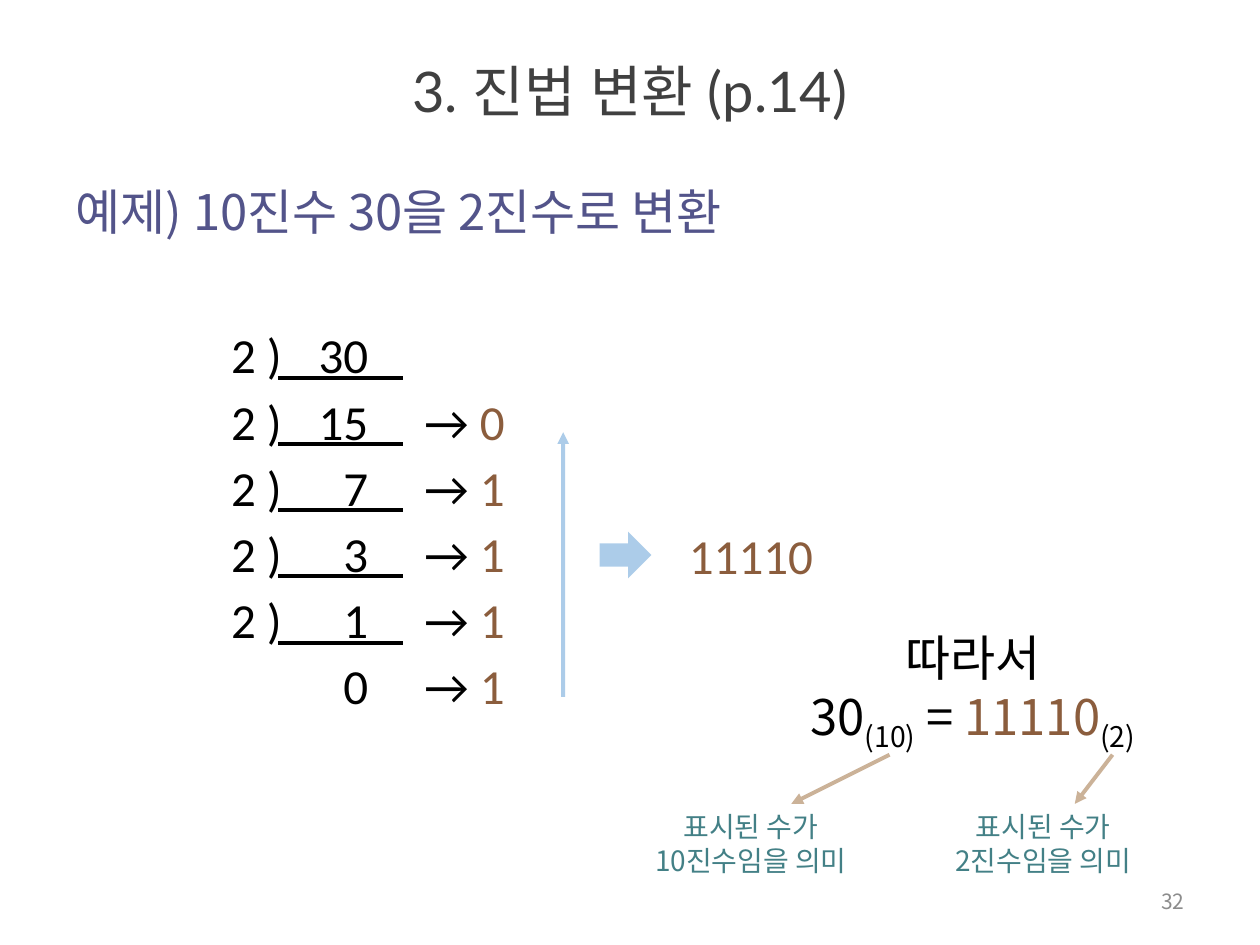
from dataclasses import dataclass

from lxml.etree import SubElement
from pptx import Presentation
from pptx.dml.color import RGBColor
from pptx.enum.shapes import MSO_CONNECTOR as Connector, MSO_SHAPE as Shape
from pptx.enum.text import MSO_ANCHOR as Anchor, MSO_AUTO_SIZE as AutoSize, PP_ALIGN as Align
from pptx.oxml.ns import qn
from pptx.util import Inches, Pt


@dataclass(frozen=True)
class Theme:
    title: str = "404040"
    heading: str = "53548A"
    text: str = "000000"
    result: str = "8B5D3D"
    note: str = "438086"
    number: str = "8C8C8C"
    blue: str = "5B9BD5"
    brown: str = "996633"
    title_size: int = 32
    main_size: int = 28
    note_size: int = 16
    number_size: int = 12
    title_font: str = "Lato"
    digit_font: str = "Calibri"
    korean_font: str = "Noto Sans CJK KR"


THEME = Theme()


def set_values(target, values):
    for name, value in values.items():
        setattr(target, name, value)


def place(shape, box):
    names = ("left", "top", "width", "height")
    set_values(shape, {name: Inches(value) for name, value in zip(names, box)})


def add_run(paragraph, text, color, size, font, baseline=0):
    run = paragraph.add_run()
    run.text = text
    set_values(run.font, {"size": Pt(size), "name": font, "bold": False})
    run.font.color.rgb = RGBColor.from_string(color)
    properties = run.font._element
    SubElement(properties, qn("a:ea")).set("typeface", font)
    if baseline:
        properties.set("baseline", str(baseline * 1000))


def fill_text(shape, lines, size, font, align=Align.LEFT):
    """Each line is a list of (text, color[, baseline percent]) runs."""
    frame = shape.text_frame
    for index, runs in enumerate(lines):
        paragraph = frame.add_paragraph() if index else frame.paragraphs[0]
        paragraph.alignment = align
        for text, color, *baseline in runs:
            add_run(paragraph, text, color, size, font, *baseline)


def add_text(slide, box, lines, size=THEME.main_size, font=THEME.digit_font,
             align=Align.LEFT, **frame_format):
    text_box = slide.shapes.add_textbox(*map(Inches, box))
    values = {"word_wrap": True, "auto_size": AutoSize.SHAPE_TO_FIT_TEXT}
    set_values(text_box.text_frame, values | frame_format)
    fill_text(text_box, lines, size, font, align)


def make_half_transparent(fill):
    color = fill._xPr.find(qn("a:solidFill"))[0]
    SubElement(color, qn("a:alpha")).set("val", "50000")


def add_line(slide, start, end, color=THEME.text, arrow=False):
    line = slide.shapes.add_connector(Connector.STRAIGHT, *map(Inches, start + end))
    line.line.width = Pt(2.25)
    line.line.fill.solid()
    line.line.color.rgb = RGBColor.from_string(color)
    if arrow:
        make_half_transparent(line.line.fill)
        SubElement(line.line._ln, qn("a:tailEnd")).set("type", "triangle")
    SubElement(line._element.spPr, qn("a:effectLst"))


def add_block_arrow(slide, box, color):
    arrow = slide.shapes.add_shape(Shape.RIGHT_ARROW, *map(Inches, box))
    arrow.shadow.inherit = False
    arrow.fill.solid()
    arrow.fill.fore_color.rgb = RGBColor.from_string(color)
    make_half_transparent(arrow.fill)
    arrow.line.fill.background()


def add_headings(slide):
    title, body = slide.placeholders
    place(title, (0.5, 0.36, 9, 0.71))
    title.text_frame.vertical_anchor = Anchor.MIDDLE
    fill_text(title, [[("3. 진법 변환 (p.14)", THEME.title)]],
              THEME.title_size, THEME.title_font, Align.CENTER)

    place(body, (0.5, 1.39, 9, 5.43))
    fill_text(body, [[("예제) 10진수 30을 2진수로 변환", THEME.heading)]],
              THEME.main_size, THEME.korean_font)
    properties = body.text_frame.paragraphs[0]._p.get_or_add_pPr()
    for name in ("marL", "indent"):
        properties.set(name, "0")
    SubElement(properties, qn("a:buNone"))


def add_division(slide, dividend, divisor=2, top=2.53, pitch=0.525):
    """Divide until zero is left, one row a step, with the remainders beside."""
    remainder = None
    while True:
        add_text(slide, (2.39, top, 0.63, 0.57), [[(str(dividend), THEME.text)]],
                 align=Align.RIGHT)
        if remainder is not None:
            add_text(slide, (3.27, top, 0.88, 0.57),
                     [[("→ ", THEME.text), (str(remainder), THEME.result)]])
        if dividend == 0:
            break
        add_text(slide, (1.51, top, 0.62, 0.57), [[(str(divisor), THEME.text)]],
                 align=Align.RIGHT)
        add_text(slide, (2.02, top, 0.25, 0.57), [[(")", THEME.text)]])
        add_line(slide, (2.21, top + 0.47), (3.2, top + 0.47))
        dividend, remainder = divmod(dividend, divisor)
        top += pitch


def add_conclusion(slide):
    add_text(slide, (6.28, 4.93, 2.88, 1.04),
             [[("따라서", THEME.text)],
              [("30", THEME.text), ("(10)", THEME.text, -25), (" = ", THEME.text),
               ("11110", THEME.result), ("(2)", THEME.text, -25)]],
             font=THEME.korean_font, align=Align.CENTER, word_wrap=False)
    notes = (
        ("10진수임을 의미", 5.08, 1.76, 7.06, 6.28),
        ("2진수임을 의미", 7.47, 1.62, 8.83, 8.53),
    )
    for meaning, left, width, start, end in notes:
        add_text(slide, (left, 6.38, width, 0.64),
                 [[("표시된 수가", THEME.note)], [(meaning, THEME.note)]],
                 THEME.note_size, THEME.korean_font, Align.CENTER)
        add_line(slide, (start, 5.99), (end, 6.38), THEME.brown, arrow=True)


def main():
    presentation = Presentation()
    set_values(presentation, {"slide_width": Inches(10), "slide_height": Inches(7.5)})
    slide = presentation.slides.add_slide(presentation.slide_layouts[1])

    add_headings(slide)
    add_division(slide, 30)

    # Remainders read upwards give the binary number
    add_line(slide, (4.47, 5.53), (4.47, 3.43), THEME.blue, arrow=True)
    add_block_arrow(slide, (4.76, 4.22, 0.41, 0.37), THEME.blue)
    add_text(slide, (5.37, 4.12, 1.2, 0.57), [[("11110", THEME.result)]], word_wrap=False)

    add_conclusion(slide)

    # Slide number
    add_text(slide, (7.17, 6.95, 2.33, 0.4), [[("32", THEME.number)]],
             THEME.number_size, THEME.korean_font, Align.RIGHT,
             vertical_anchor=Anchor.MIDDLE, auto_size=AutoSize.NONE)

    presentation.save("out.pptx")


if __name__ == "__main__":
    main()
